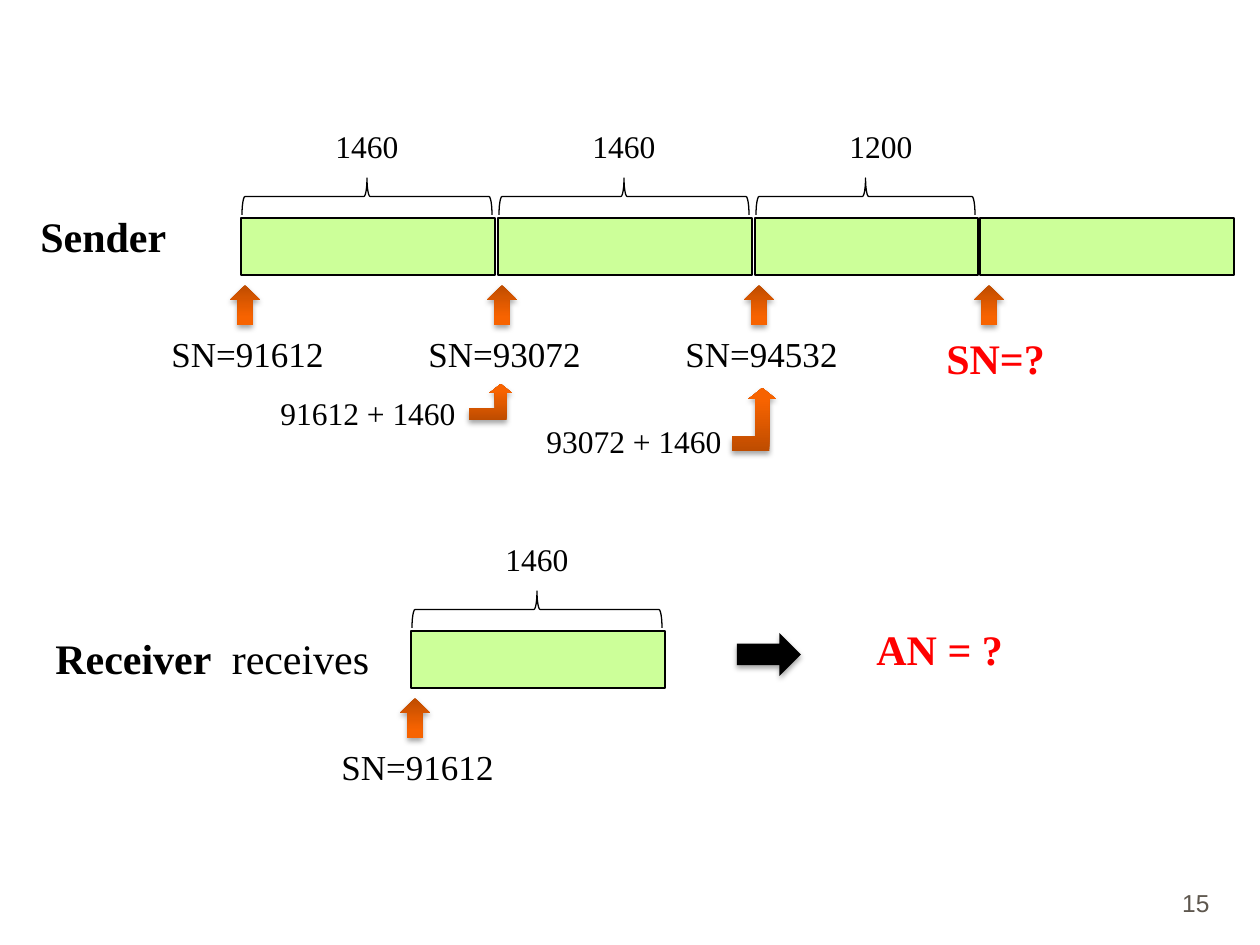
from lxml.etree import SubElement
from pptx import Presentation
from pptx.dml.color import RGBColor
from pptx.enum.shapes import MSO_SHAPE
from pptx.enum.text import MSO_ANCHOR, MSO_AUTO_SIZE, PP_ALIGN
from pptx.oxml import parse_xml
from pptx.oxml.ns import nsdecls, qn
from pptx.util import Emu, Pt

PIXELS_PER_INCH = 126
BLACK, RED, GREEN, GREY = "000000", "FF0000", "CCFF99", "5E574E"
ORANGE_STOPS = [(0, "BE4C00"), (80, "F76300"), (100, "F86300")]
BLOCK_HEIGHT = 57


def px(length):
    return Emu(round(length * 914400 / PIXELS_PER_INCH))


def color(value):
    return RGBColor.from_string(value)


def add_text(slide, box, runs, size, text_color=BLACK, font="Times New Roman"):
    """Add one line of text; runs is a list of (text, bold)."""
    shape = slide.shapes.add_textbox(*map(px, box))
    frame = shape.text_frame
    frame.word_wrap = False
    frame.auto_size = MSO_AUTO_SIZE.SHAPE_TO_FIT_TEXT
    for text, bold in runs:
        run = frame.paragraphs[0].add_run()
        run.text = text
        run.font.name = font
        run.font.size = Pt(size)
        run.font.bold = bold
        run.font.color.rgb = color(text_color)
    return shape


def add_shape(slide, kind, box, fill=None, line=None):
    shape = slide.shapes.add_shape(kind, *map(px, box))
    shape.shadow.inherit = False
    if fill:
        shape.fill.solid()
        shape.fill.fore_color.rgb = color(fill)
    else:
        shape.fill.background()
    if line:
        shape.line.color.rgb = color(line)
        shape.line.width = Pt(0.75)
    else:
        shape.line.fill.background()
    return shape


def add_shadow(shape):
    effects = shape._element.spPr.find(qn("a:effectLst"))
    shadow = SubElement(effects, qn("a:outerShdw"), blurRad=str(Pt(3.1)),
                        dist=str(Pt(1.8)), dir="5400000", rotWithShape="0")
    shade = SubElement(shadow, qn("a:srgbClr"), val=BLACK)
    SubElement(shade, qn("a:alpha"), val="35000")


def add_orange_arrow(slide, kind, box):
    shape = add_shape(slide, kind, box)
    stops = "".join(
        f'<a:gs pos="{position * 1000}"><a:srgbClr val="{value}"/></a:gs>'
        for position, value in ORANGE_STOPS)
    gradient = parse_xml(
        f'<a:gradFill {nsdecls("a")} rotWithShape="1"><a:gsLst>{stops}</a:gsLst>'
        '<a:lin ang="16200000" scaled="0"/></a:gradFill>')
    properties = shape._element.spPr
    properties.replace(properties.find(qn("a:noFill")), gradient)
    add_shadow(shape)
    return shape


def add_brace(slide, left, top, width, height):
    """A left brace turned a quarter, so that its tip points up."""
    box = (left + (width - height) / 2, top - (width - height) / 2, height, width)
    brace = add_shape(slide, MSO_SHAPE.LEFT_BRACE, box, line=BLACK)
    brace.rotation = 90


def add_segment(slide, left, top, width, length=None, arrow_left=-11):
    """A data block, the arrow at its first byte and its braced length."""
    add_shape(slide, MSO_SHAPE.RECTANGLE, (left, top, width, BLOCK_HEIGHT), GREEN, BLACK)
    arrow = add_orange_arrow(slide, MSO_SHAPE.DOWN_ARROW,
                             (left + arrow_left, top + 67, 30, 40))
    arrow._element.spPr.find(qn("a:xfrm")).set("flipV", "1")
    if length:
        add_brace(slide, left + 1, top - 40, width - 4, 37)
        add_text(slide, (left + 82, top - 97, 89, 50), [(length, False)], 18)


def add_sequence_number(slide, left, top, text):
    add_text(slide, (left - 82, top + 108, 179, 55), [(text, False)], 20)


def main():
    presentation = Presentation()
    presentation.slide_width, presentation.slide_height = px(1260), px(945)
    slide = presentation.slides.add_slide(presentation.slide_layouts[6])

    # Sender: three known segments and the next one
    sender_top = 218
    add_text(slide, (28, 204, 152, 64), [("Sender", True)], 24)
    for left, width, length, number in [(241, 254, "1460", "SN=91612"),
                                        (498, 254, "1460", "SN=93072"),
                                        (755, 223, "1200", "SN=94532")]:
        add_segment(slide, left, sender_top, width, length)
        add_sequence_number(slide, left, sender_top, number)
    add_segment(slide, 980, sender_top, 254, arrow_left=-6)
    add_text(slide, (934, 326, 125, 64), [("SN=?", True)], 24, RED)

    # Sums that lead to the sequence numbers
    for text, text_box, arrow_box in [
            ("91612 + 1460", (268, 388, 203, 50), (469, 384, 43, 36)),
            ("93072 + 1460", (534, 416, 203, 50), (732, 388, 44, 63))]:
        add_text(slide, text_box, [(text, False)], 18)
        arrow = add_orange_arrow(slide, MSO_SHAPE.BENT_UP_ARROW, arrow_box)
        for index, value in enumerate((0.325, 0.312, 0.25)):
            arrow.adjustments[index] = value

    # Receiver: one segment and the acknowledgement
    receiver_left, receiver_top = 411, 631
    add_text(slide, (43, 626, 341, 63), [("Receiver  ", True), ("receives", False)], 24)
    add_segment(slide, receiver_left, receiver_top, 254, "1460")
    add_sequence_number(slide, receiver_left, receiver_top, "SN=91612")
    add_shadow(add_shape(slide, MSO_SHAPE.RIGHT_ARROW, (737, 633, 64, 43), BLACK))
    add_text(slide, (864, 617, 154, 64), [("AN = ?", True)], 24, RED)

    # Slide number
    number = add_text(slide, (960, 861, 262, 63), [("15", False)], 14, GREY, "Arial")
    number.text_frame.auto_size = MSO_AUTO_SIZE.NONE
    number.text_frame.word_wrap = True
    number.text_frame.vertical_anchor = MSO_ANCHOR.BOTTOM
    number.text_frame.paragraphs[0].alignment = PP_ALIGN.RIGHT

    presentation.save("out.pptx")


if __name__ == "__main__":
    main()
